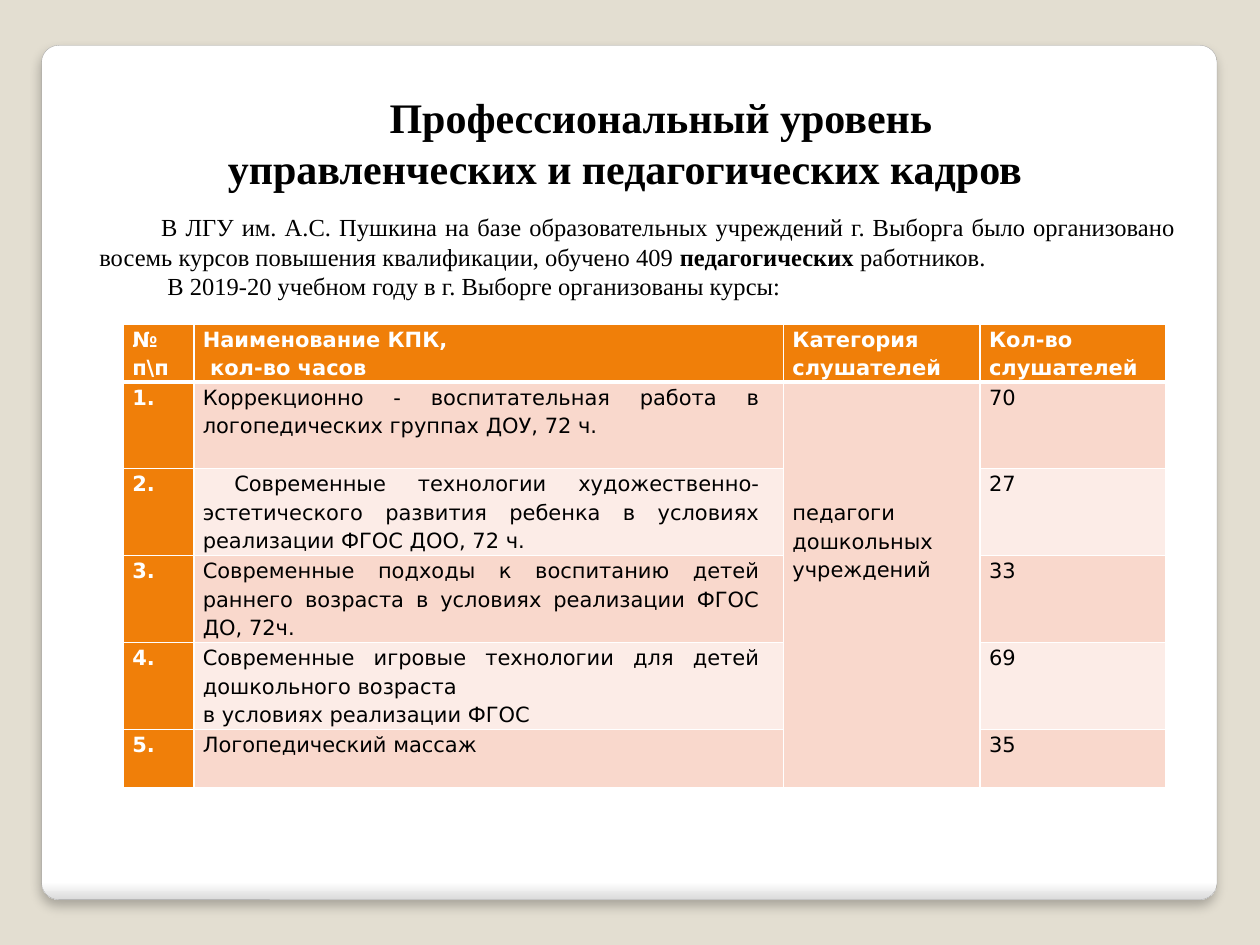
from dataclasses import dataclass

from lxml import etree
from pptx import Presentation
from pptx.dml.color import RGBColor
from pptx.enum.shapes import MSO_SHAPE as Shape
from pptx.enum.text import MSO_ANCHOR as Anchor, PP_ALIGN as Align
from pptx.oxml.ns import nsdecls, qn
from pptx.util import Inches, Pt


@dataclass(frozen=True)
class Theme:
    background: str = "E3DED1"
    panel: str = "FFFFFF"
    panel_edge: str = "DADADA"
    panel_line: str = "A4A4A4"
    text: str = "000000"
    inverse: str = "FFFFFF"
    accent: str = "F07F09"
    bands: tuple = ("F9D8CC", "FCECE7")
    serif: str = "Times New Roman"
    sans: str = "DejaVu Sans"
    title_size: int = 24
    body_size: int = 14
    table_size: int = 12


HEADERS = [
    ["№ п\\п"],
    ["Наименование КПК,", " кол-во часов"],
    ["Категория слушателей"],
    ["Кол-во слушателей"],
]
COURSES = [
    (["Коррекционно - воспитательная работа в логопедических группах ДОУ, 72 ч."], "70"),
    (["Современные технологии художественно- эстетического развития ребенка "
      "в условиях реализации ФГОС ДОО, 72 ч."], "27"),
    (["Современные подходы к воспитанию детей раннего возраста "
      "в условиях реализации ФГОС ДО, 72ч."], "33"),
    (["Современные игровые технологии для детей дошкольного возраста",
      "в условиях реализации ФГОС"], "69"),
    (["Логопедический массаж"], "35"),
]
AUDIENCE = ["педагоги дошкольных учреждений"]
COLUMN_WIDTHS = [0.56, 4.68, 1.56, 1.47]
ROW_HEIGHTS = [0.46, 0.69, 0.69, 0.69, 0.69, 0.46]


class SlideBuilder:
    def __init__(self, slide, theme):
        self.slide = slide
        self.theme = theme
        fill = slide.background.fill
        fill.solid()
        fill.fore_color.rgb = RGBColor.from_string(theme.background)

    def panel(self, left, top, width, height):
        """Rounded white sheet with a soft shadow under it."""
        shape = self.slide.shapes.add_shape(
            Shape.ROUNDED_RECTANGLE, Inches(left), Inches(top), Inches(width), Inches(height))
        shape.adjustments[0] = 0.02
        shape.fill.gradient()
        shape.fill.gradient_angle = 270
        stops = shape.fill.gradient_stops
        for stop, position, color in zip(
                stops, (0.98, 1), (self.theme.panel, self.theme.panel_edge)):
            stop.position = position
            stop.color.rgb = RGBColor.from_string(color)
        shape.line.color.rgb = RGBColor.from_string(self.theme.panel_line)
        shape.line.width = Pt(0.16)
        shape.shadow.inherit = False
        effects = shape._element.spPr.find(qn("a:effectLst"))
        effects.append(etree.fromstring(
            f'<a:outerShdw {nsdecls("a")} blurRad="{Pt(6)}" dist="{Pt(4)}" dir="5400000" '
            'algn="t" rotWithShape="0"><a:srgbClr val="000000"><a:alpha val="25000"/>'
            '</a:srgbClr></a:outerShdw>'))

    def text_box(self, left, top, width, height, anchor=Anchor.TOP):
        box = self.slide.shapes.add_textbox(
            Inches(left), Inches(top), Inches(width), Inches(height))
        frame = box.text_frame
        frame.word_wrap = True
        frame.vertical_anchor = anchor
        return frame

    def paragraph(self, frame, index, runs, size, font, align=Align.JUSTIFY,
                  color=None, bold=False, margin=0, indent=0):
        """Write (text, bold) runs; bold=None leaves the weight to the runs."""
        paragraph = frame.paragraphs[0] if index == 0 else frame.add_paragraph()
        paragraph.alignment = align
        properties = paragraph._p.get_or_add_pPr()
        properties.set("marL", str(Inches(margin)))
        properties.set("indent", str(Inches(indent)))
        paragraph.font.size = Pt(size)
        paragraph.font.name = font
        paragraph.font.bold = bold
        paragraph.font.color.rgb = RGBColor.from_string(color or self.theme.text)
        for text, run_bold in runs:
            run = paragraph.add_run()
            run.text = text
            if bold is None:
                run.font.bold = run_bold
        return paragraph

    def cell(self, cell, lines, fill, header=False, top_width=1, bottom_width=1,
             top=0, right=0.07, indent=0):
        cell.margin_left, cell.margin_right = Inches(0.07), Inches(right)
        cell.margin_top, cell.margin_bottom = Inches(top), 0
        properties = cell._tc.get_or_add_tcPr()
        for side, width in zip("LRTB", (1, 1, top_width, bottom_width)):
            properties.append(etree.fromstring(
                f'<a:ln{side} {nsdecls("a")} w="{Pt(width)}"><a:solidFill>'
                f'<a:srgbClr val="{self.theme.inverse}"/></a:solidFill></a:ln{side}>'))
        cell.fill.solid()
        cell.fill.fore_color.rgb = RGBColor.from_string(fill)
        for index, line in enumerate(lines):
            paragraph = self.paragraph(
                cell.text_frame, index, [(line, header)], self.theme.table_size,
                self.theme.sans, bold=header, indent=indent,
                color=self.theme.inverse if header else self.theme.text)
            paragraph.line_spacing = 1.15

    def course_table(self, left, top):
        theme = self.theme
        table = self.slide.shapes.add_table(
            len(ROW_HEIGHTS), len(COLUMN_WIDTHS), Inches(left), Inches(top),
            Inches(sum(COLUMN_WIDTHS)), Inches(sum(ROW_HEIGHTS))).table
        table.horz_banding = False
        for column, width in zip(table.columns, COLUMN_WIDTHS):
            column.width = Inches(width)
        for row, height in zip(table.rows, ROW_HEIGHTS):
            row.height = Inches(height)
        for column, lines in enumerate(HEADERS):
            self.cell(table.cell(0, column), lines, theme.accent, header=True, bottom_width=3)
        for row, (name, listeners) in enumerate(COURSES, start=1):
            band = theme.bands[(row - 1) % 2]
            edge = 3 if row == 1 else 1
            self.cell(table.cell(row, 0), [f"{row}."], theme.accent, header=True, top_width=edge)
            self.cell(table.cell(row, 1), name, band, top_width=edge, right=0.19,
                      indent=0.25 if row == 2 else 0)
            self.cell(table.cell(row, 2), AUDIENCE if row == 1 else [], theme.bands[0],
                      top_width=edge, top=0.92 if row == 1 else 0)
            self.cell(table.cell(row, 3), [listeners], band, top_width=edge)
        table.cell(1, 2).merge(table.cell(len(COURSES), 2))


def main():
    theme = Theme()
    presentation = Presentation()
    presentation.slide_width, presentation.slide_height = Inches(10), Inches(7.5)
    builder = SlideBuilder(presentation.slides.add_slide(presentation.slide_layouts[6]), theme)

    builder.panel(0.33, 0.36, 9.33, 6.78)

    title = builder.text_box(0.67, 0.68, 8.58, 0.91)
    title_lines = [("Профессиональный уровень", 0.57),
                   ("управленческих и педагогических кадров", 0)]
    for index, (line, margin) in enumerate(title_lines):
        builder.paragraph(title, index, [(line, True)], theme.title_size, theme.serif,
                          align=Align.CENTER, bold=True, margin=margin)

    builder.course_table(0.98, 2.57)

    summary = builder.text_box(0.69, 1.63, 8.74, 0.81, Anchor.MIDDLE)
    builder.paragraph(summary, 0, [
        ("В ЛГУ им. А.С. Пушкина на базе образовательных учреждений г. Выборга было "
         "организовано восемь курсов повышения квалификации, обучено 409 ", False),
        ("педагогических", True),
        (" работников.", False),
    ], theme.body_size, theme.serif, bold=None, indent=0.49)
    builder.paragraph(summary, 1, [
        ("В 2019-20 учебном году в г. Выборге организованы курсы:", False),
    ], theme.body_size, theme.serif, indent=0.54)

    presentation.save("out.pptx")


if __name__ == "__main__":
    main()
